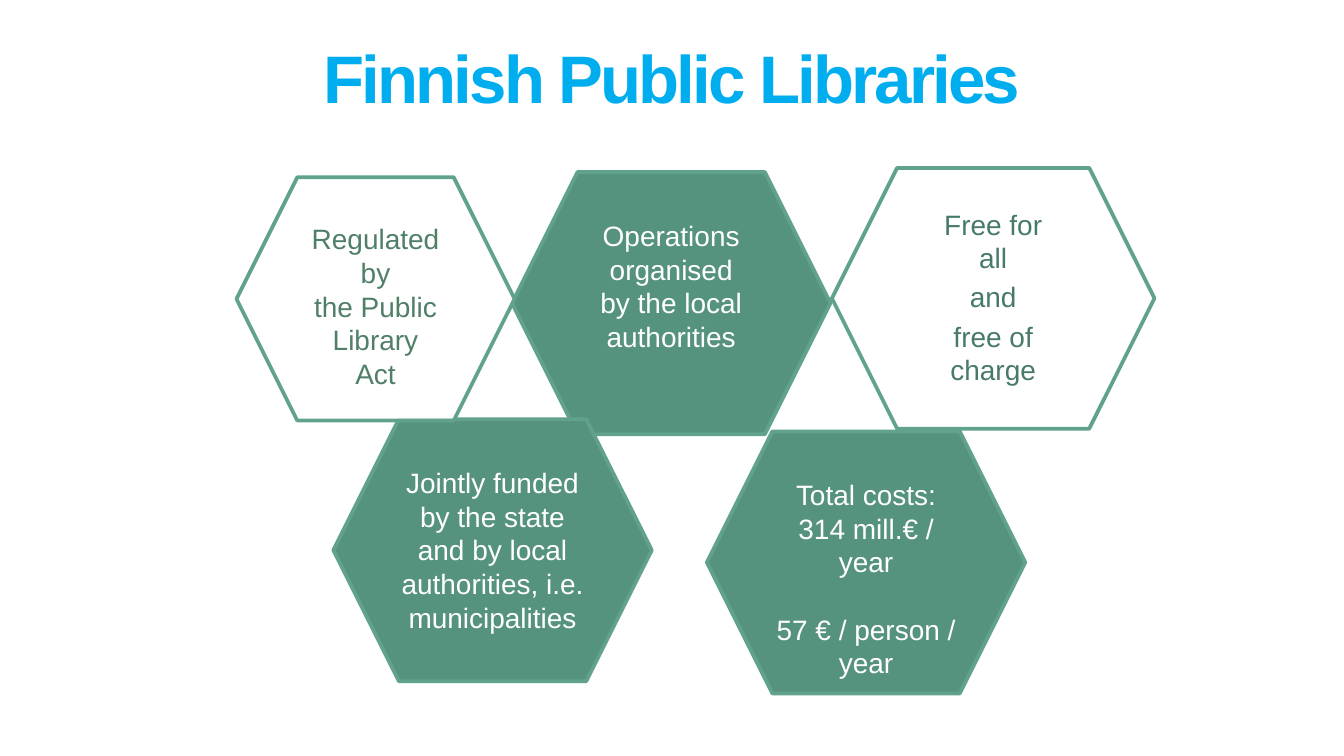
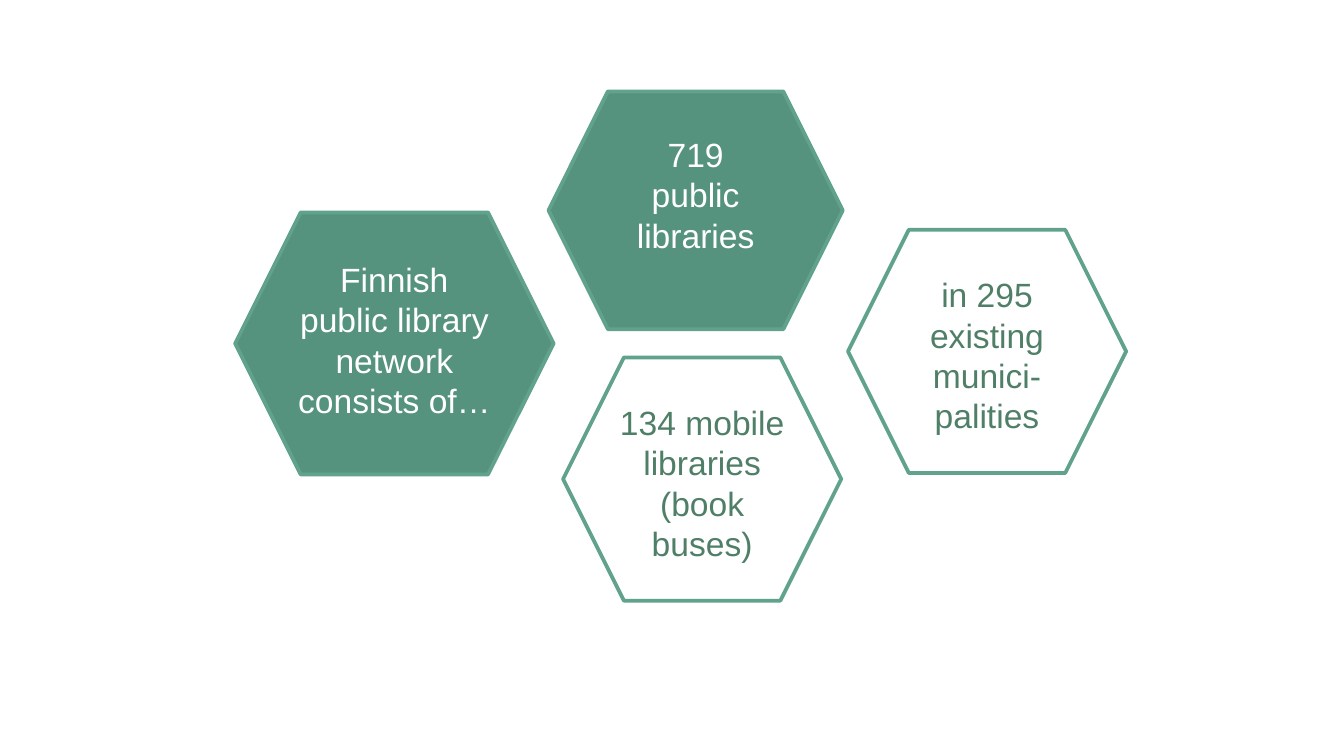
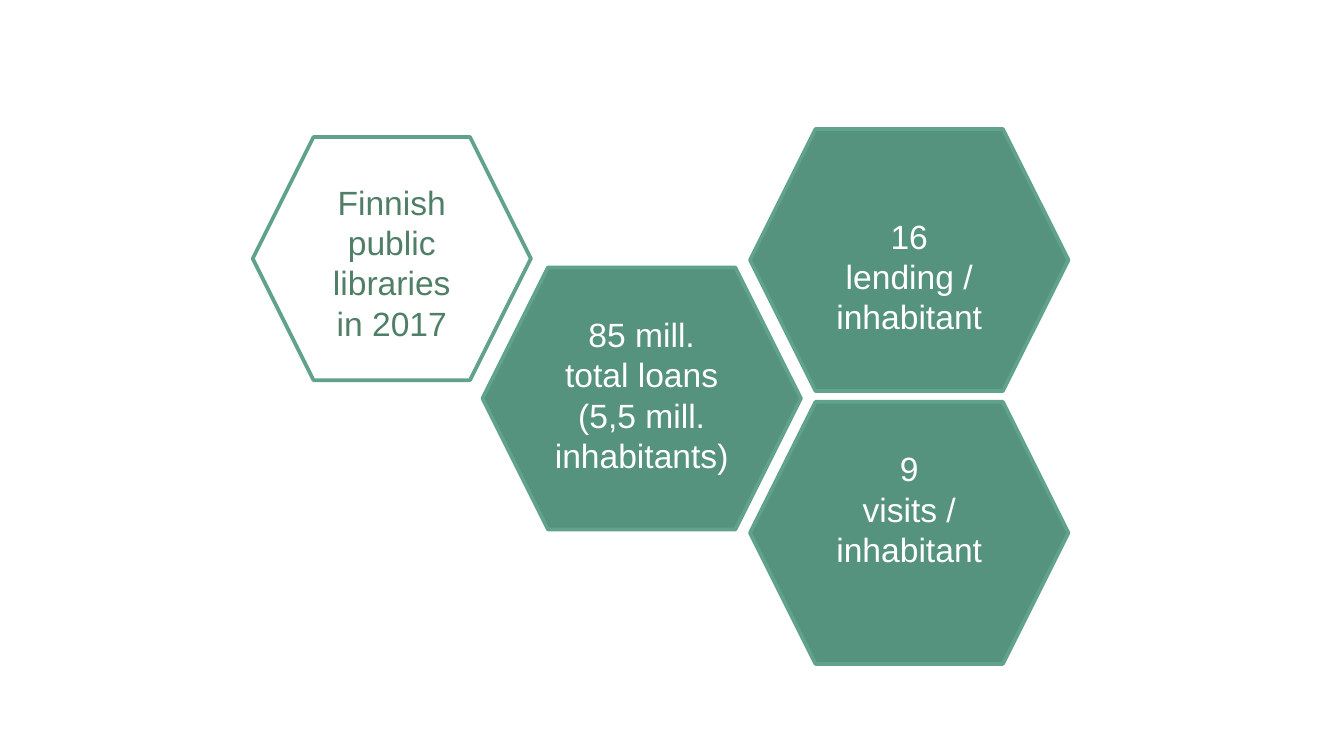
from lxml import etree
from pptx import Presentation
from pptx.dml.color import RGBColor
from pptx.enum.shapes import MSO_SHAPE
from pptx.enum.text import MSO_ANCHOR, MSO_AUTO_SIZE, PP_ALIGN
from pptx.oxml.ns import qn
from pptx.util import Pt

HEXAGON = MSO_SHAPE.HEXAGON
TOP = MSO_ANCHOR.TOP
NO_FIT = MSO_AUTO_SIZE.NONE
CENTER = PP_ALIGN.CENTER

FONT = "Arial"
BLUE = "00ADEF"
GREEN = "56937E"
EDGE = "61A28C"
WHITE = "FFFFFF"
DARK_GREEN = "507F67"
GRAY_GREEN = "487A69"
LARGE = (170.6, 140.4)
MEDIUM = (157.7, 127.4)
SMALL = (149, 130.3)


def color(hex_string):
    return RGBColor.from_string(hex_string)


def dress_hexagon(shape, fill, ink, size, lines):
    shape.fill.solid()
    shape.fill.fore_color.rgb = color(fill)
    if fill == WHITE:
        shade = shape.fill._xPr.find(qn("a:solidFill"))[0]
        etree.SubElement(shade, qn("a:alpha")).set("val", "90000")
    shape.line.color.rgb = color(EDGE)
    shape.line.width = Pt(2)
    shape.shadow.inherit = False
    frame = shape.text_frame
    frame.text = "\n".join(lines)
    frame.word_wrap = True
    frame.auto_size = NO_FIT
    frame.vertical_anchor = TOP
    for para in frame.paragraphs:
        para.alignment = CENTER
        for span in para.runs:
            span.font.name = FONT
            span.font.size = Pt(size)
            span.font.color.rgb = color(ink)


deck = Presentation()
deck.slide_width, deck.slide_height = Pt(720), Pt(405)
content_layout, blank_layout = deck.slide_layouts[1], deck.slide_layouts[6]

slides = [
    (content_layout, 15, [
        (GREEN, 274.3, 92.2, LARGE, ["Operations organised", "by the local authorities"]),
        (GREEN, 378.7, 231.1, LARGE, ["Total costs:", "314 mill.€ / year", "57 € / person / year"]),
        (GREEN, 178.6, 224.6, LARGE,
         ["Jointly funded by the state and by local authorities, i.e. municipalities"]),
        (WHITE, 126.7, 95, SMALL, ["Regulated by", "the Public Library", "Act"]),
    ]),
    (blank_layout, 18, [
        (GREEN, 126, 113.8, LARGE, ["Finnish public library network consists of…"]),
        (GREEN, 293.8, 49, MEDIUM, ["719", "public libraries"]),
        (WHITE, 301.7, 191.5, SMALL, ["134 mobile libraries (book buses)"]),
        (WHITE, 454.3, 123.1, SMALL, ["in 295 existing", "munici-", "palities"]),
    ]),
    (blank_layout, 18, [
        (GREEN, 258.5, 143.3, LARGE, ["85 mill.", "total loans", "(5,5 mill. inhabitants)"]),
        (GREEN, 401.8, 215.3, LARGE, ["9", "visits / inhabitant"]),
        (GREEN, 401.8, 69.1, LARGE, ["16", "lending / inhabitant"]),
        (WHITE, 135.4, 73.4, SMALL, ["Finnish public libraries", "in 2017"]),
    ]),
]

for layout, size, hexagons in slides:
    page = deck.slides.add_slide(layout)
    for fill, left, top, (width, height), lines in hexagons:
        box = page.shapes.add_shape(HEXAGON, Pt(left), Pt(top), Pt(width), Pt(height))
        ink = WHITE if fill == GREEN else DARK_GREEN
        dress_hexagon(box, fill, ink, size, lines)
        if lines[0] == "Total costs:":
            box.text_frame.paragraphs[2].space_before = Pt(18)
        if lines[0] == "16":
            box.text_frame.margin_top = Pt(25)

page = deck.slides[0]
title = page.shapes.title
title.left, title.top, title.width, title.height = Pt(0), Pt(0), Pt(720), Pt(128)
frame = title.text_frame
frame.text = "Finnish Public Libraries"
frame.auto_size = NO_FIT
frame.vertical_anchor = TOP
frame.margin_left = frame.margin_top = frame.margin_right = Pt(28)
frame.margin_bottom = Pt(0)
para = frame.paragraphs[0]
para.alignment = CENTER
para.line_spacing = 0.8
span = para.runs[0]
span.font.name = FONT
span.font.size = Pt(36)
span.font.bold = True
span.font.color.rgb = color(BLUE)
span._r.get_or_add_rPr().set("spc", "-150")

body = page.placeholders[1]
body.left, body.top, body.width, body.height = Pt(445.7), Pt(90), Pt(172.8), Pt(139.7)
geometry = etree.SubElement(body._element.spPr, qn("a:prstGeom"))
geometry.set("prst", "hexagon")
etree.SubElement(geometry, qn("a:avLst"))
dress_hexagon(body, WHITE, GRAY_GREEN, 15, ["Free for all", "and", "free of charge"])
frame = body.text_frame
frame.margin_left = frame.margin_right = Pt(28)
frame.margin_top = frame.margin_bottom = Pt(0)
for index, para in enumerate(frame.paragraphs):
    properties = para._p.get_or_add_pPr()
    properties.set("marL", "0")
    properties.set("indent", "0")
    etree.SubElement(properties, qn("a:buNone"))
    para.space_before = Pt(3 if index else 0)

deck.save("out.pptx")
